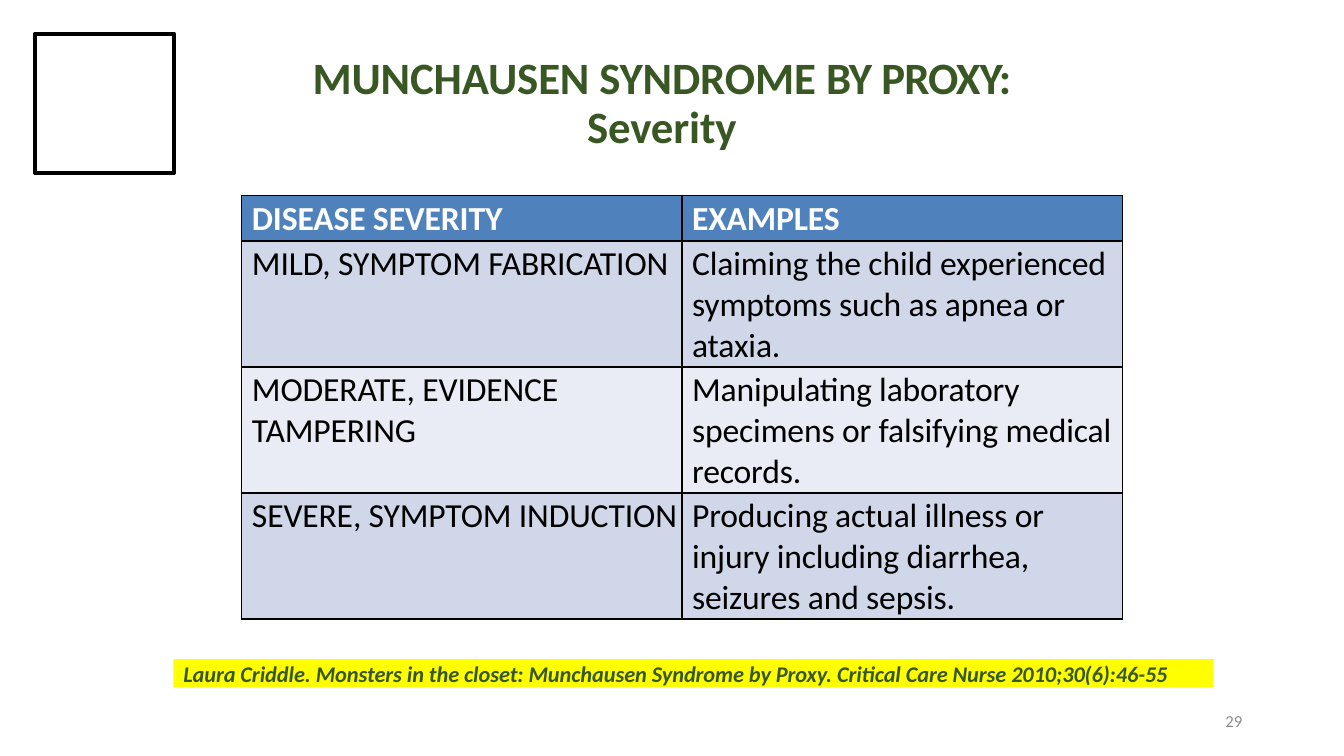
from lxml.etree import SubElement
from pptx import Presentation
from pptx.dml.color import RGBColor
from pptx.enum.shapes import MSO_SHAPE as Shape
from pptx.enum.text import MSO_ANCHOR as Anchor, MSO_AUTO_SIZE as AutoSize, PP_ALIGN as Align
from pptx.oxml.ns import qn
from pptx.util import Inches, Pt

COLORS = {
    "green": "385723", "black": "000000", "white": "FFFFFF", "gray": "8C8C8C",
    "header": "4F81BC", "band": "D0D7E8", "light": "E9ECF4", "yellow": "FFFF00",
}
TITLE = [
    [("MUNCHAUSEN SYNDROME ", -0.1), ("BY ", -0.6), ("PROXY:", -0.7)],
    [("Severity", -0.1)],
]
SEVERITY = [
    ("DISEASE SEVERITY", "EXAMPLES"),
    ("MILD, SYMPTOM FABRICATION",
     "Claiming the child experienced symptoms such as apnea or ataxia."),
    ("MODERATE, EVIDENCE TAMPERING",
     "Manipulating laboratory specimens or falsifying medical records."),
    ("SEVERE, SYMPTOM INDUCTION",
     "Producing actual illness or injury including diarrhea, seizures and sepsis."),
]
CITATION = ("Laura Criddle. Monsters in the closet: Munchausen Syndrome by Proxy. "
            "Critical Care Nurse 2010;30(6):46-55")


class SlideBuilder:
    """Draw styled elements on one slide, with lengths in percent of its size."""

    def __init__(self, prs, font):
        self.width, self.height, self.font = prs.slide_width, prs.slide_height, font
        self.s = prs.slides.add_slide(prs.slide_layouts[5])

    def x(self, share):
        return int(self.width * share / 100)

    def y(self, share):
        return int(self.height * share / 100)

    def box(self, left, top, width, height):
        return self.x(left), self.y(top), self.x(width), self.y(height)

    def color(self, name):
        return RGBColor.from_string(COLORS[name])

    def run(self, p, text, size, color, bold=False, italic=False, spacing=0):
        r = p.add_run()
        r.text = text
        f = r.font
        f.name, f.size, f.bold, f.italic = self.font, Pt(size), bold, italic
        f.color.rgb = self.color(color)
        r._r.get_or_add_rPr().set("spc", str(round(spacing * 100)))

    def margins(self, holder, left, top):
        holder.margin_left, holder.margin_top = Inches(left), Inches(top)
        holder.margin_right = holder.margin_bottom = 0

    def title(self, lines, *place):
        sp = self.s.shapes.title
        sp.left, sp.top, sp.width, sp.height = self.box(*place)
        tf = sp.text_frame
        tf.auto_size, tf.vertical_anchor = AutoSize.NONE, Anchor.MIDDLE
        self.margins(tf, 0, 0.01)
        for i, line in enumerate(lines):
            p = tf.add_paragraph() if i else tf.paragraphs[0]
            p.alignment, p.line_spacing = Align.CENTER, Pt(35.4)
            for text, spacing in line:
                self.run(p, text, 32, "green", bold=True, spacing=spacing)

    def rect(self, *place, fill=None, line=None):
        sp = self.s.shapes.add_shape(Shape.RECTANGLE, *self.box(*place))
        sp.shadow.inherit = False
        if fill:
            sp.fill.solid()
            sp.fill.fore_color.rgb = self.color(fill)
        else:
            sp.fill.background()
        if line:
            sp.line.color.rgb, sp.line.width = self.color(line), Pt(3)
        else:
            sp.line.fill.background()
        return sp

    def citation(self, text, *place):
        tf = self.rect(*place, fill="yellow").text_frame
        tf.word_wrap, tf.vertical_anchor = True, Anchor.TOP
        self.margins(tf, 0.1, 0.01)
        p = tf.paragraphs[0]
        p.alignment, p.space_before = Align.LEFT, Pt(1)
        self.run(p, text, 16, "green", bold=True, italic=True, spacing=-0.06)

    def borders(self, cell):
        tc_pr = cell._tc.get_or_add_tcPr()
        for side in ("a:lnL", "a:lnR", "a:lnT", "a:lnB"):
            ln = SubElement(tc_pr, qn(side), w=str(Pt(1)))
            SubElement(SubElement(ln, qn("a:solidFill")), qn("a:srgbClr"), val=COLORS["black"])

    def cell(self, cell, text, fill, color, bold):
        self.borders(cell)
        cell.fill.solid()
        cell.fill.fore_color.rgb = self.color(fill)
        self.margins(cell, 0.1, 0.03)
        p = cell.text_frame.paragraphs[0]
        p.space_before = Pt(2.4)
        self.run(p, text, 24, color, bold=bold, spacing=-0.1)

    def table(self, rows, left, top, width, header, row):
        heights = [header] + [row] * (len(rows) - 1)
        frame = self.s.shapes.add_table(
            len(rows), len(rows[0]), *self.box(left, top, width, sum(heights)))
        for i, texts in enumerate(rows):
            frame.table.rows[i].height = self.y(heights[i])
            fill = "header" if i == 0 else "band" if i % 2 else "light"
            for j, text in enumerate(texts):
                self.cell(frame.table.cell(i, j), text, fill,
                          "black" if i else "white", i == 0)

    def number(self, text, *place):
        tf = self.s.shapes.add_textbox(*self.box(*place)).text_frame
        tf.word_wrap, tf.vertical_anchor = True, Anchor.MIDDLE
        p = tf.paragraphs[0]
        p.alignment = Align.RIGHT
        self.run(p, text, 12, "gray")


def main():
    prs = Presentation()
    prs.slide_width, prs.slide_height = Inches(13.33), Inches(7.5)
    slide = SlideBuilder(prs, "Calibri")
    slide.title(TITLE, 14.33, 6.93, 69.84, 13.33)
    slide.rect(2.6, 4.45, 10.35, 18.4, line="black")
    slide.table(SEVERITY, 18, 25.87, 65.5, header=6, row=16.4)
    slide.citation(CITATION, 12.9, 87.2, 77.4, 3.73)
    slide.number("29", 70.67, 92.67, 22.5, 5.33)
    prs.save("out.pptx")


if __name__ == "__main__":
    main()
